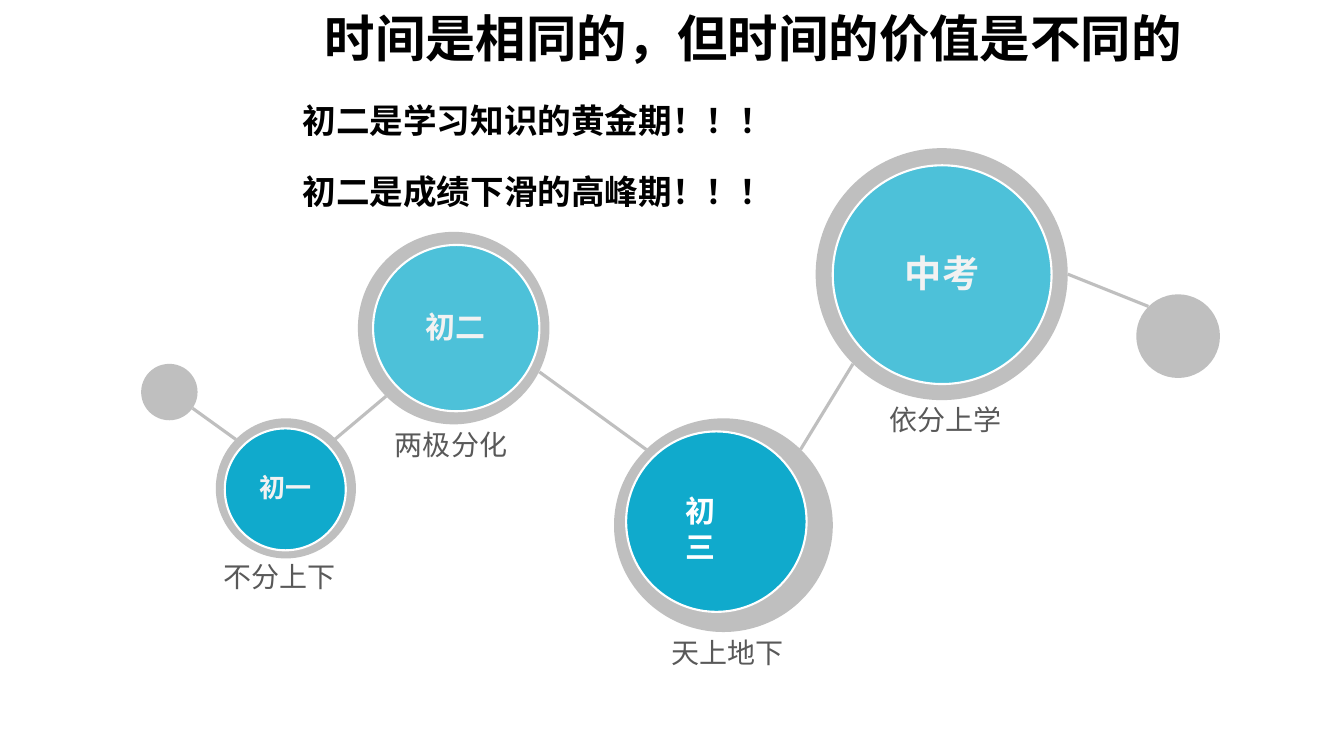
from typing import NamedTuple

from lxml import etree
from pptx import Presentation
from pptx import util as u
from pptx.dml.color import RGBColor
from pptx.enum import shapes, text
from pptx.oxml.ns import qn

COLORS = {
    "ring": "BFBFBF", "deep": "10AACC", "light": "4DC1D9", "white": "FFFFFF",
    "pale": "F2F2F2", "caption": "595959", "black": "000000",
}
CJK = "Noto Sans CJK SC"


class Box(NamedTuple):
    left: float
    top: float
    width: float
    height: float


class Style(NamedTuple):
    size: float
    color: str
    bold: bool = True
    font: str = CJK
    align: text.PP_ALIGN = text.PP_ALIGN.CENTER
    spacing: float | u.Length | None = None
    margins: tuple[float, float] = (0.1, 0.05)
    anchor: text.MSO_ANCHOR = text.MSO_ANCHOR.TOP
    wrap: bool = True


class Stage(NamedTuple):
    ring: Box
    disc: Box
    fill: str
    name: str
    name_box: Box
    name_style: Style
    caption: str
    caption_at: tuple[float, float]


class Link(NamedTuple):
    x1: float
    y1: float
    x2: float
    y2: float


TITLE = Style(36, "black", font="Montserrat", spacing=0.9, anchor=text.MSO_ANCHOR.MIDDLE)
SLOGAN = Style(24, "black", align=text.PP_ALIGN.LEFT, margins=(0.13, 0.06))
CAPTION = Style(20, "caption", bold=False, spacing=u.Pt(18.8), margins=(0.12, 0.06))

STAGES = [
    Stage(Box(2.14, 4.15, 1.39, 1.39), Box(2.23, 4.25, 1.2, 1.21), "deep",
          "初一", Box(2.47, 4.63, 0.72, 0.42), Style(18.6, "pale", wrap=False),
          "不分上下", (1.78, 5.56)),
    Stage(Box(3.55, 2.3, 1.9, 1.91), Box(3.7, 2.43, 1.65, 1.65), "light",
          "初二", Box(4.12, 3.01, 0.8, 0.46), Style(21.4, "pale", wrap=False),
          "两极分化 ", (3.51, 4.25)),
    Stage(Box(6.09, 4.15, 2.17, 2.12), Box(6.21, 4.28, 1.79, 1.79), "deep",
          "初三", Box(6.57, 4.84, 0.76, 0.42), Style(21.4, "white"),
          "天上地下 ", (6.25, 6.32)),
    Stage(Box(8.09, 1.47, 2.5, 2.5), Box(8.26, 1.64, 2.17, 2.17), "light",
          "中考", Box(8.87, 2.43, 0.95, 0.55), Style(26.6, "pale", wrap=False),
          "依分上学", (8.38, 4.01)),
]
LINKS = [
    Link(3.32, 4.36, 3.83, 3.93), Link(5.35, 3.69, 6.41, 4.46),
    Link(7.94, 4.46, 8.46, 3.61), Link(1.91, 4.05, 2.34, 4.36),
    Link(10.59, 2.72, 11.39, 3.04),
]
END_DOTS = [Box(1.4, 3.61, 0.56, 0.56), Box(11.27, 2.92, 0.83, 0.83)]
SLOGANS = [("初二是学习知识的黄金期！！！", 0.93), ("初二是成绩下滑的高峰期！！！", 1.64)]


def rgb(name: str) -> RGBColor:
    return RGBColor.from_string(COLORS[name])


def inches(values: tuple) -> list[u.Length]:
    return [u.Inches(v) for v in values]


def apply(target: object, values: dict) -> None:
    """Set each named attribute on the target."""
    for key, value in values.items():
        setattr(target, key, value)


def add_circle(s, box: Box, fill: str, outline: str | None = None) -> None:
    sp = s.shapes.add_shape(shapes.MSO_SHAPE.OVAL, *inches(box))
    sp.shadow.inherit = False
    sp.fill.solid()
    sp.fill.fore_color.rgb = rgb(fill)
    if outline:
        sp.line.color.rgb = rgb(outline)
        sp.line.width = u.Pt(1.5)
    else:
        sp.line.fill.background()


def add_text(s, box: Box, words: str, style: Style) -> None:
    tf = s.shapes.add_textbox(*inches(box)).text_frame
    side, edge = inches(style.margins)
    apply(tf, {
        "word_wrap": style.wrap, "vertical_anchor": style.anchor,
        "margin_left": side, "margin_right": side,
        "margin_top": edge, "margin_bottom": edge,
    })
    p = tf.paragraphs[0]
    apply(p, {"alignment": style.align, "line_spacing": style.spacing})
    r = p.add_run()
    r.text = words
    apply(r.font, {"size": u.Pt(style.size), "bold": style.bold, "name": style.font})
    r.font.color.rgb = rgb(style.color)
    east_asian = etree.SubElement(r.font._element, qn("a:ea"))
    east_asian.set("typeface", CJK)


def add_link(s, link: Link) -> None:
    cx = s.shapes.add_connector(shapes.MSO_CONNECTOR.STRAIGHT, *inches(link))
    cx.line.color.rgb = rgb("ring")
    cx.line.width = u.Pt(2.25)
    etree.SubElement(cx._element.spPr, qn("a:effectLst"))


def add_stage(s, stage: Stage) -> None:
    add_circle(s, stage.ring, "ring")
    add_circle(s, stage.disc, stage.fill, "white")
    add_text(s, stage.name_box, stage.name, stage.name_style)
    add_text(s, Box(*stage.caption_at, 1.99, 0.39), stage.caption, CAPTION)


def main() -> None:
    prs = Presentation()
    prs.slide_width, prs.slide_height = inches((13.33, 7.5))
    s = prs.slides.add_slide(prs.slide_layouts[6])
    for stage in STAGES:
        add_stage(s, stage)
    for link in LINKS:
        add_link(s, link)
    for dot in END_DOTS:
        add_circle(s, dot, "ring")
    add_text(s, Box(1.72, 0.15, 11.5, 0.52), "时间是相同的，但时间的价值是不同的", TITLE)
    for words, top in SLOGANS:
        add_text(s, Box(2.87, top, 4.89, 0.9), words, SLOGAN)
    prs.save("out.pptx")


if __name__ == "__main__":
    main()
